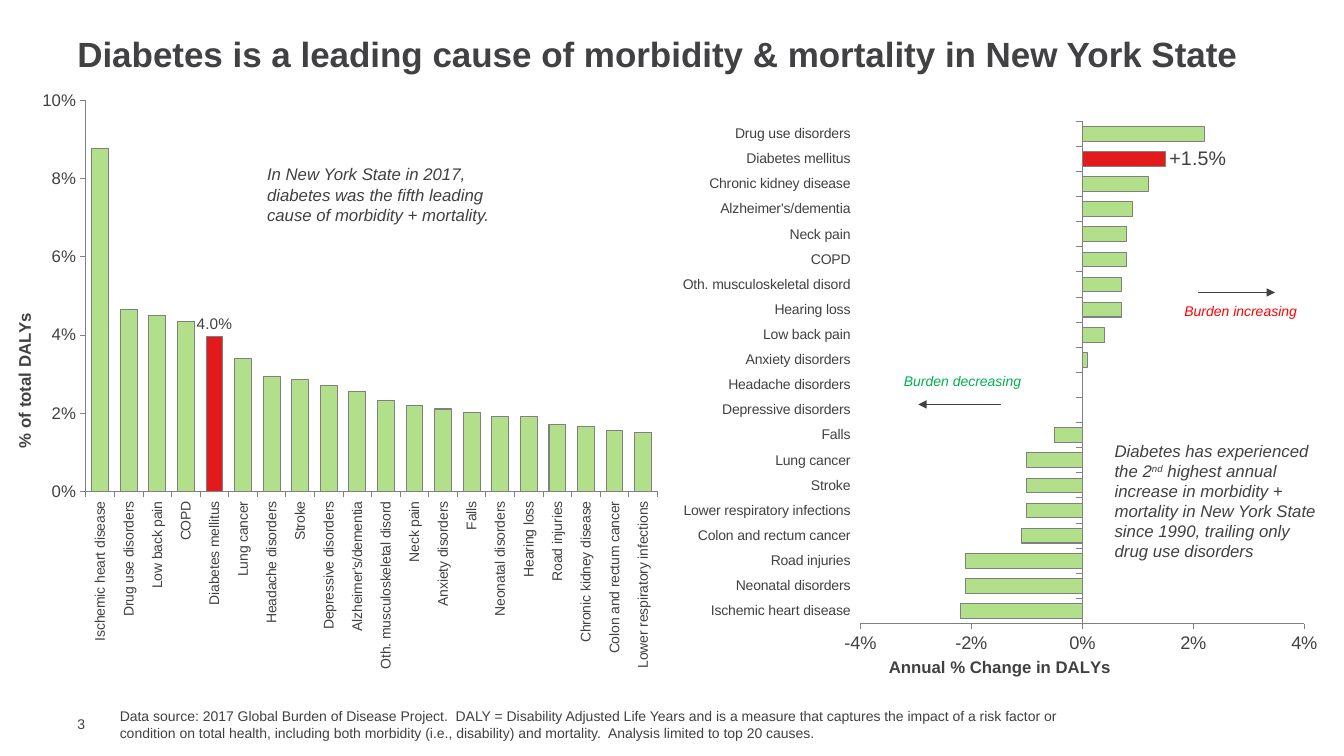
from lxml import etree
from pptx import Presentation
from pptx import util as u
from pptx.chart.data import CategoryChartData
from pptx.dml.color import RGBColor
from pptx.enum import chart as charts, shapes, text
from pptx.oxml.ns import qn

TEXT = RGBColor(0x41, 0x40, 0x42)
GREEN_BAR = RGBColor(0xB2, 0xDF, 0x8A)
RED_BAR = RGBColor(0xE3, 0x1A, 0x1C)
OUTLINE = RGBColor(0x80, 0x80, 0x80)
INCREASE = RGBColor(0xFF, 0x00, 0x00)
DECREASE = RGBColor(0x00, 0xB0, 0x50)
FONT = "Arial"
UPRIGHT = "-5400000"
HIGHLIGHT = "Diabetes mellitus"

BURDEN = [
    ("Ischemic heart disease", 0.0878), ("Drug use disorders", 0.0466),
    ("Low back pain", 0.0449), ("COPD", 0.0436), (HIGHLIGHT, 0.0397),
    ("Lung cancer", 0.034), ("Headache disorders", 0.0295), ("Stroke", 0.0286),
    ("Depressive disorders", 0.027), ("Alzheimer's/dementia", 0.0257),
    ("Oth. musculoskeletal disord", 0.0233), ("Neck pain", 0.0221),
    ("Anxiety disorders", 0.0211), ("Falls", 0.0201),
    ("Neonatal disorders", 0.0193), ("Hearing loss", 0.0193),
    ("Road injuries", 0.0172), ("Chronic kidney disease", 0.0166),
    ("Colon and rectum cancer", 0.0155), ("Lower respiratory infections", 0.0152),
]
CHANGE = [
    ("Ischemic heart disease", -0.022), ("Neonatal disorders", -0.021),
    ("Road injuries", -0.021), ("Colon and rectum cancer", -0.011),
    ("Lower respiratory infections", -0.01), ("Stroke", -0.01),
    ("Lung cancer", -0.01), ("Falls", -0.005), ("Depressive disorders", 0),
    ("Headache disorders", 0), ("Anxiety disorders", 0.001),
    ("Low back pain", 0.004), ("Hearing loss", 0.007),
    ("Oth. musculoskeletal disord", 0.007), ("COPD", 0.008),
    ("Neck pain", 0.008), ("Alzheimer's/dementia", 0.009),
    ("Chronic kidney disease", 0.012), (HIGHLIGHT, 0.015),
    ("Drug use disorders", 0.022),
]


def style_font(font, size, color=TEXT, bold=False, italic=False):
    font.name, font.size = FONT, u.Pt(size)
    font.bold, font.italic = bold, italic
    font.color.rgb = color


def add_text(slide, box, pieces, size, color=TEXT, bold=False, italic=False,
             align=None, anchor=text.MSO_ANCHOR.TOP):
    """Place one paragraph; every second piece is superscript."""
    shape = slide.shapes.add_textbox(*map(u.Cm, box))
    frame = shape.text_frame
    frame.word_wrap = True
    frame.vertical_anchor = anchor
    paragraph = frame.paragraphs[0]
    paragraph.alignment = align
    for index, piece in enumerate(pieces):
        run = paragraph.add_run()
        run.text = piece
        style_font(run.font, size, color, bold, italic)
        if index % 2:
            run.font._element.set("baseline", "30000")
    return frame


def add_arrow(slide, start_x, end_x, y):
    arrow = slide.shapes.add_connector(
        shapes.MSO_CONNECTOR.STRAIGHT, u.Cm(start_x), u.Cm(y), u.Cm(end_x), u.Cm(y))
    arrow.line.color.rgb = TEXT
    arrow.line.width = u.Pt(1)
    etree.SubElement(arrow.line._get_or_add_ln(), qn("a:tailEnd"), type="triangle")
    etree.SubElement(arrow._element.spPr, qn("a:effectLst"))


def set_plot_layout(chart, fractions):
    plot_area = chart._chartSpace.chart.plotArea
    for old in plot_area.findall(qn("c:layout")):
        plot_area.remove(old)
    layout = etree.Element(qn("c:layout"))
    manual = etree.SubElement(layout, qn("c:manualLayout"))
    settings = [("layoutTarget", "inner"), ("xMode", "edge"), ("yMode", "edge")]
    settings += zip("xywh", map(str, fractions))
    for name, value in settings:
        etree.SubElement(manual, qn(f"c:{name}"), val=value)
    plot_area.insert(0, layout)


def add_bars(slide, box, kind, rows, axis_title, scale, value_size, plot):
    data = CategoryChartData(number_format="0.0%")
    data.categories = [name for name, _ in rows]
    data.add_series("Series 1", [value for _, value in rows])
    chart = slide.shapes.add_chart(kind, *map(u.Cm, box), data).chart
    chart.has_legend = chart.has_title = False
    style_font(chart.font, 18)
    set_plot_layout(chart, plot)

    # Bars, with diabetes picked out
    bars = chart.plots[0]
    bars.gap_width = 70
    bars.vary_by_categories = False
    series = bars.series[0]
    series.invert_if_negative = False
    point = series.points[[name for name, _ in rows].index(HIGHLIGHT)]
    for part, color in ((series, GREEN_BAR), (point, RED_BAR)):
        part.format.fill.solid()
        part.format.fill.fore_color.rgb = color
        part.format.line.color.rgb = OUTLINE
        part.format.line.width = u.Pt(0.75)

    # Axes
    values = chart.value_axis
    values.has_major_gridlines = False
    values.minimum_scale, values.maximum_scale = scale
    values.major_unit = 0.02
    values.tick_labels.number_format = "0%"
    values.tick_labels.number_format_is_linked = False
    values.axis_title.text_frame.text = axis_title
    style_font(values.axis_title.text_frame.paragraphs[0].runs[0].font, 12, bold=True)
    for axis, size in ((values, value_size), (chart.category_axis, 10)):
        axis.major_tick_mark = charts.XL_TICK_MARK.OUTSIDE
        axis.minor_tick_mark = charts.XL_TICK_MARK.NONE
        axis.format.line.color.rgb = OUTLINE
        style_font(axis.tick_labels.font, size)
    return chart, point.data_label


def add_burden_panel(slide, left, top, width, height):
    chart, label = add_bars(
        slide, (left, top, width, height), charts.XL_CHART_TYPE.COLUMN_CLUSTERED,
        BURDEN, "% of total DALYs", (0, 0.1), 12, (0.113, 0.027, 0.863, 0.655))
    label.position = charts.XL_LABEL_POSITION.OUTSIDE_END
    style_font(label.font, 11)
    for owner in (chart.category_axis._element.find(qn("c:txPr")),
                  chart.value_axis.axis_title.text_frame._txBody):
        body = owner.find(qn("a:bodyPr"))
        body.set("rot", UPRIGHT)
        body.set("vert", "horz")
    add_text(slide, (left + 6.2, top + 1.88, 6.86, 1.8),
             ["In New York State in 2017, diabetes was the fifth leading "
              "cause of morbidity + mortality."], 12, italic=True)


def add_change_panel(slide, left, top, width, height):
    chart, label = add_bars(
        slide, (left, top, width, height), charts.XL_CHART_TYPE.BAR_CLUSTERED,
        CHANGE, "Annual % Change in DALYs", (-0.04, 0.04), 13,
        (0.27, 0.02, 0.641, 0.879))
    chart.category_axis.tick_label_position = charts.XL_TICK_LABEL_POSITION.LOW
    label.text_frame.text = "+1.5%"
    style_font(label.text_frame.paragraphs[0].runs[0].font, 14)
    label.position = charts.XL_LABEL_POSITION.OUTSIDE_END

    # Finding and direction markers
    add_text(slide, (left + 10.87, top + 8.2, 5.77, 3.33),
             ["Diabetes has experienced the 2", "nd",
              " highest annual increase in morbidity + mortality in New York State "
              "since 1990, trailing only drug use disorders"], 12, italic=True)
    directions = (
        ("Burden increasing", INCREASE, 11.83, 4.72, 13.23, 15.16, 4.6),
        ("Burden decreasing", DECREASE, 4.82, 6.5, 8.25, 6.17, 7.42),
    )
    for caption, color, x, y, start, end, arrow_y in directions:
        add_arrow(slide, left + start, left + end, top + arrow_y)
        add_text(slide, (left + x, top + y, 4.93, 0.69), [caption], 10, color,
                 italic=True, align=text.PP_ALIGN.CENTER)


def add_title(slide, left, top, width, height):
    frame = add_text(
        slide, (left, top, width, height),
        ["Diabetes is a leading cause of morbidity & mortality in New York State"],
        25, bold=True, anchor=text.MSO_ANCHOR.MIDDLE)
    frame.margin_top = frame.margin_bottom = 0
    frame.paragraphs[0].line_spacing = 0.8


def add_footer(slide, left, top, width, height):
    number = add_text(slide, (left, top + 0.33, 1.09, 0.43), ["3"], 10,
                      anchor=text.MSO_ANCHOR.MIDDLE)
    number.margin_top = number.margin_bottom = number.margin_right = 0
    add_text(slide, (left + 1.07, top, width - 1.07, height),
             ["Data source: 2017 Global Burden of Disease Project.  DALY = Disability "
              "Adjusted Life Years and is a measure that captures the impact of a risk "
              "factor or condition on total health, including both morbidity (i.e., "
              "disability) and mortality.  Analysis limited to top 20 causes."], 10)


def main():
    presentation = Presentation()
    presentation.slide_width, presentation.slide_height = u.Cm(33.87), u.Cm(19.05)
    slide = presentation.slides.add_slide(presentation.slide_layouts[6])
    add_title(slide, 1.7, 0.89, 30.48, 1.12)
    add_change_panel(slide, 16.97, 2.77, 17.45, 14.4)
    add_burden_panel(slide, 0.28, 2.13, 16.69, 15.04)
    add_footer(slide, 1.7, 17.7, 25.45, 1.12)
    presentation.save("out.pptx")


if __name__ == "__main__":
    main()
